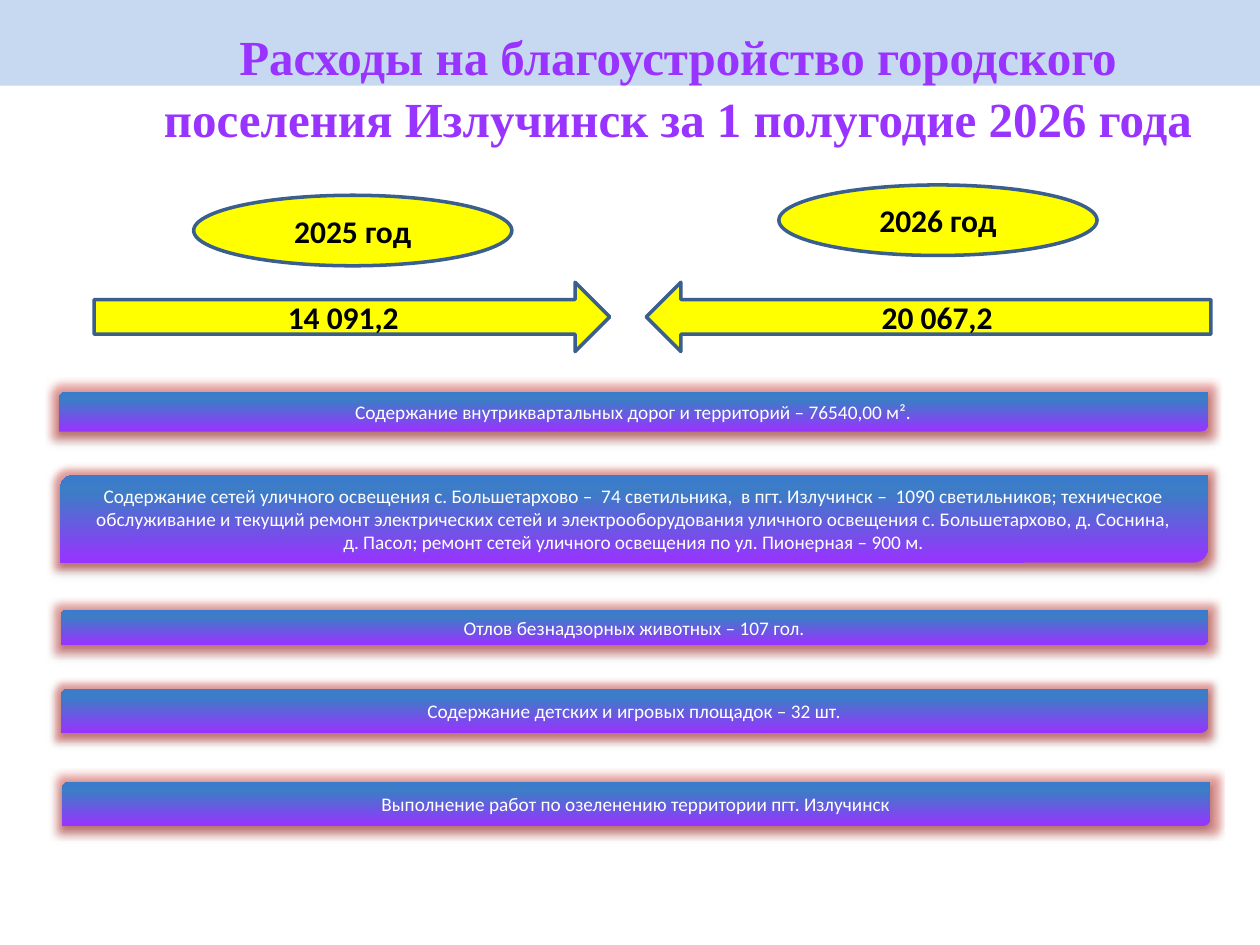
from dataclasses import dataclass

from lxml.etree import SubElement
from pptx import Presentation
from pptx.dml.color import RGBColor
from pptx.enum.shapes import MSO_SHAPE as Preset
from pptx.enum.text import MSO_ANCHOR as Anchor, PP_ALIGN as Align
from pptx.oxml import parse_xml
from pptx.oxml.ns import nsdecls, qn
from pptx.shapes.autoshape import Shape
from pptx.slide import Slide
from pptx.text.text import TextFrame
from pptx.util import Pt

COLORS = {
    "band": "C6D9F1",
    "purple": "9933FF",
    "yellow": "FFFF00",
    "outline": "3A5F8C",
    "black": "000000",
    "white": "FFFFFF",
    "blue": "3D7CC7",
    "light_blue": "3A7CCB",
    "glow": "D6312B",
}
BAR_STOPS = ((0, "purple"), (80, "blue"), (100, "light_blue"))


@dataclass(frozen=True)
class Box:
    left: float
    top: float
    width: float
    height: float


@dataclass(frozen=True)
class TextStyle:
    font: str
    size: float
    color: str
    bold: bool = False


@dataclass(frozen=True)
class Year:
    label: str
    amount: str
    ellipse: Box
    arrow: Box
    flipped: bool


@dataclass(frozen=True)
class Expense:
    box: Box
    lines: tuple[str, ...]


TITLE_STYLE = TextStyle("Times New Roman", 28, "purple", True)
YEAR_STYLE = TextStyle("Calibri", 18, "black", True)
BAR_STYLE = TextStyle("Calibri", 11, "white")

TITLE = "Расходы на благоустройство городского поселения Излучинск за 1 полугодие 2026 года"
YEARS = (
    Year("2025 год", "14 091,2", Box(110.7, 111.6, 181.8, 40.3),
         Box(53.8, 161.3, 294.6, 39.6), False),
    Year("2026 год", "20 067,2", Box(445.1, 105.7, 181.8, 40.3),
         Box(369.3, 161.3, 322.7, 39.6), True),
)
EXPENSES = (
    Expense(Box(33.8, 224, 656.4, 22.6),
            ("Содержание внутриквартальных дорог и территорий – 76540,00 м².",)),
    Expense(Box(34.2, 271.4, 656, 50.2),
            ("Содержание сетей уличного освещения с. Большетархово –  74 светильника,  "
             "в пгт. Излучинск –  1090 светильников; техническое обслуживание и текущий "
             "ремонт электрических сетей и электрооборудования уличного освещения "
             "с. Большетархово, д. Соснина,",
             "д. Пасол; ремонт сетей уличного освещения по ул. Пионерная – 900 м.")),
    Expense(Box(34.7, 348.5, 655.6, 20.2), ("Отлов безнадзорных животных – 107 гол.",)),
    Expense(Box(34.7, 393.6, 655.6, 25.4), ("Содержание детских и игровых площадок – 32 шт.",)),
    Expense(Box(35.5, 446.9, 656, 25.2),
            ("Выполнение работ по озеленению территории пгт. Излучинск",)),
)


def rgb(name: str) -> RGBColor:
    """Return the named colour."""
    return RGBColor.from_string(COLORS[name])


def lengths(box: Box) -> tuple[Pt, ...]:
    """Return the box as left, top, width and height."""
    return tuple(Pt(value) for value in (box.left, box.top, box.width, box.height))


def write(frame: TextFrame, lines: tuple[str, ...], style: TextStyle, anchor: Anchor) -> None:
    """Write centred lines into one paragraph."""
    frame.word_wrap = True
    frame.vertical_anchor = anchor
    paragraph = frame.paragraphs[0]
    paragraph.alignment = Align.CENTER
    for index, line in enumerate(lines):
        if index:
            paragraph.add_line_break()
        run = paragraph.add_run()
        run.text = line
        run.font.name = style.font
        run.font.size = Pt(style.size)
        run.font.bold = style.bold
        run.font.color.rgb = rgb(style.color)


def add_filled(slide: Slide, preset: Preset, box: Box, fill: str) -> Shape:
    """Add a plain shape with a solid fill and no line."""
    shape = slide.shapes.add_shape(preset, *lengths(box))
    shape.shadow.inherit = False
    shape.fill.solid()
    shape.fill.fore_color.rgb = rgb(fill)
    shape.line.fill.background()
    return shape


def add_yellow(slide: Slide, preset: Preset, box: Box, text: str) -> Shape:
    """Add an outlined yellow shape with bold text."""
    shape = add_filled(slide, preset, box, "yellow")
    shape.line.color.rgb = rgb("outline")
    shape.line.width = Pt(2)
    write(shape.text_frame, (text,), YEAR_STYLE, Anchor.MIDDLE)
    return shape


def add_year(slide: Slide, year: Year) -> None:
    """Add the arrow and the ellipse of one year."""
    arrow = add_yellow(slide, Preset.RIGHT_ARROW, year.arrow, year.amount)
    if year.flipped:
        arrow.element.spPr.find(qn("a:xfrm")).set("flipH", "1")
    add_yellow(slide, Preset.OVAL, year.ellipse, year.label)


def add_effect(effects, tag: str, color: str, alpha: int, **attributes: str) -> None:
    """Append a translucent effect to an effect list."""
    effect = SubElement(effects, qn(tag), attributes)
    tone = SubElement(effect, qn("a:srgbClr"), val=COLORS[color])
    SubElement(tone, qn("a:alpha"), val=str(alpha * 1000))


def add_expense(slide: Slide, expense: Expense) -> None:
    """Add a glowing gradient bar with its expense text."""
    shape = add_filled(slide, Preset.ROUND_2_DIAG_RECTANGLE, expense.box, "blue")
    properties = shape.element.spPr
    stops = "".join(
        f'<a:gs pos="{position * 1000}"><a:srgbClr val="{COLORS[color]}"/></a:gs>'
        for position, color in BAR_STOPS
    )
    gradient = parse_xml(
        f'<a:gradFill {nsdecls("a")} rotWithShape="1"><a:gsLst>{stops}</a:gsLst>'
        '<a:lin ang="16200000" scaled="0"/></a:gradFill>'
    )
    properties.replace(properties.find(qn("a:solidFill")), gradient)
    effects = properties.find(qn("a:effectLst"))
    add_effect(effects, "a:glow", "glow", 40, rad=str(Pt(8)))
    add_effect(effects, "a:outerShdw", "black", 35, blurRad=str(Pt(3.1)),
               dist=str(Pt(1.8)), dir="5400000", rotWithShape="0")
    write(shape.text_frame, expense.lines, BAR_STYLE, Anchor.MIDDLE)


def main() -> None:
    """Build and save the slide."""
    presentation = Presentation()
    presentation.slide_width, presentation.slide_height = Pt(720), Pt(540)
    slide = presentation.slides.add_slide(presentation.slide_layouts[6])
    add_filled(slide, Preset.RECTANGLE, Box(0, 0, 720, 49), "band")
    title = slide.shapes.add_textbox(*lengths(Box(63.4, 10.1, 648, 90)))
    write(title.text_frame, (TITLE,), TITLE_STYLE, Anchor.TOP)
    title.text_frame.paragraphs[0].line_spacing = 1.05
    for year in YEARS:
        add_year(slide, year)
    for expense in EXPENSES:
        add_expense(slide, expense)
    presentation.save("out.pptx")


if __name__ == "__main__":
    main()
